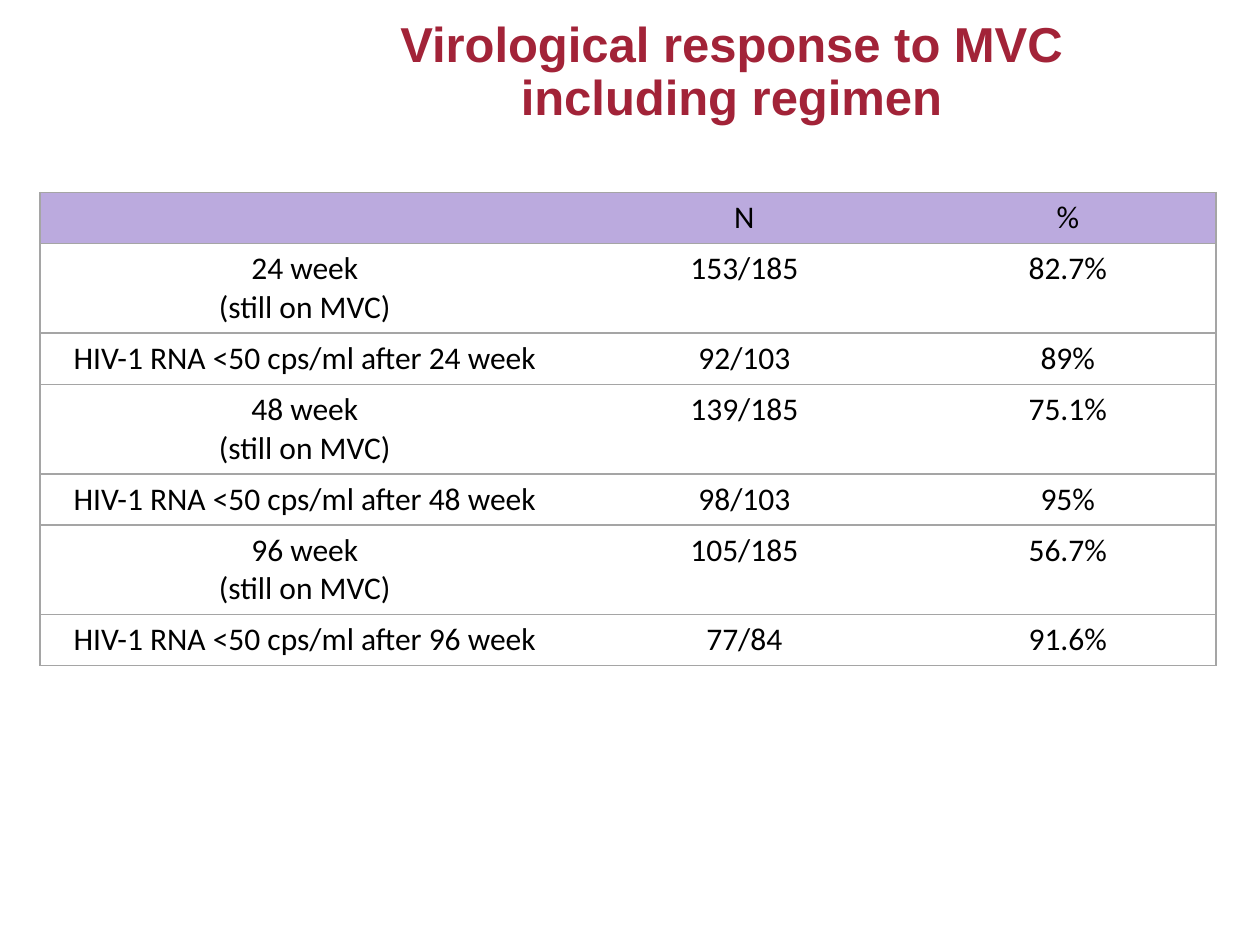
from lxml import etree
from pptx import Presentation
from pptx.dml.color import RGBColor
from pptx.enum import text
from pptx.oxml import ns
from pptx.util import Pt

COLORS = {"title": "A22338", "header": "BBAADE", "body": "FFFFFF",
          "text": "000000", "border": "A5A5A5"}


def add_run(para, words, font, size, color, bold=False):
    para.alignment = text.PP_ALIGN.CENTER
    span = para.add_run()
    span.text = words
    span.font.name = font
    span.font.size = Pt(size)
    span.font.bold = bold
    span.font.color.rgb = RGBColor.from_string(COLORS[color])


def add_border(cell, side, visible):
    line = etree.Element(ns.qn(f"a:{side}"), w=str(Pt(1)))
    if visible:
        fill = etree.SubElement(line, ns.qn("a:solidFill"))
        etree.SubElement(fill, ns.qn("a:srgbClr"), val=COLORS["border"])
    else:
        etree.SubElement(line, ns.qn("a:noFill"))
    cell._tc.get_or_add_tcPr().append(line)


deck = Presentation()
deck.slide_width, deck.slide_height = Pt(720), Pt(540)
page = deck.slides.add_slide(deck.slide_layouts[5])

title = page.shapes.title
title.left, title.top, title.width, title.height = Pt(165), Pt(8), Pt(506), Pt(121.7)
title.text_frame.word_wrap = True
title.text_frame.auto_size = text.MSO_AUTO_SIZE.NONE
title.text_frame.vertical_anchor = text.MSO_ANCHOR.TOP
heading = title.text_frame.paragraphs[0]
heading.line_spacing = 0.9
add_run(heading, "Virological response to MVC including regimen", "Arial", 28, "title", True)

responses = [
    (24, "153/185", "82.7%", "92/103", "89%"),
    (48, "139/185", "75.1%", "98/103", "95%"),
    (96, "105/185", "56.7%", "77/84", "91.6%"),
]
rows = [("", "N", "%")]
for week, treated, treated_share, suppressed, suppressed_share in responses:
    rows.append((f"{week} week\n(still on MVC)", treated, treated_share))
    rows.append((f"HIV-1 RNA <50 cps/ml after {week} week", suppressed, suppressed_share))

widths = [302.4, 200, 169.6]
frame = page.shapes.add_table(len(rows), len(widths), Pt(23), Pt(110), Pt(672), Pt(270))
table = frame.table
for column, width in zip(table.columns, widths):
    column.width = Pt(width)

for r, row in enumerate(rows):
    table.rows[r].height = Pt(51 if "\n" in row[0] else 29.2)
    for c, words in enumerate(row):
        cell = table.cell(r, c)
        for side, visible in (("lnL", c == 0), ("lnR", c == len(widths) - 1),
                              ("lnT", True), ("lnB", True)):
            add_border(cell, side, visible)
        cell.fill.solid()
        cell.fill.fore_color.rgb = RGBColor.from_string(COLORS["body" if r else "header"])
        for i, line in enumerate(words.splitlines()):
            box = cell.text_frame
            para = box.add_paragraph() if i else box.paragraphs[0]
            add_run(para, line, "Calibri", 18, "text")

deck.save("out.pptx")
